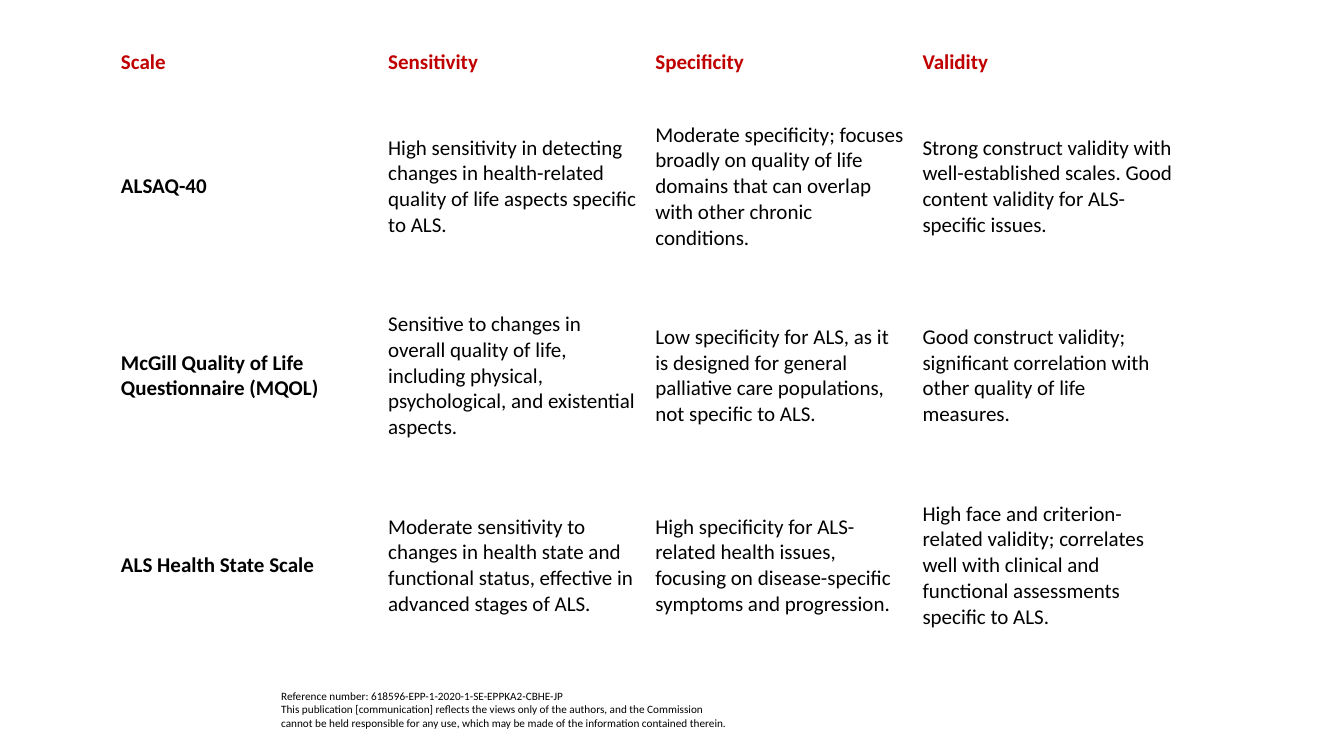
"""Build a slide comparing three ALS quality of life scales."""
from dataclasses import astuple, dataclass

from pptx import Presentation
from pptx.dml.color import RGBColor
from pptx.enum.text import MSO_ANCHOR, MSO_AUTO_SIZE
from pptx.slide import Slide
from pptx.text.text import _Paragraph
from pptx.util import Inches, Pt

MIDDLE = MSO_ANCHOR.MIDDLE
GROW = MSO_AUTO_SIZE.SHAPE_TO_FIT_TEXT
COLORS = {"heading": "C00000", "text": "000000"}
COLUMN_WIDTH = 2.65
ROW_HEIGHTS = (0.43, 2.04, 1.72, 2.04)
CELL_FORMAT = {
    "vertical_anchor": MIDDLE,
    "margin_left": Inches(0.08),
    "margin_right": Inches(0.08),
    "margin_top": Inches(0.04),
    "margin_bottom": Inches(0.04),
}
REFERENCE = (
    "Reference number: 618596-EPP-1-2020-1-SE-EPPKA2-CBHE-JP",
    "This publication [communication] reflects the views only of the authors, and the Commission "
    "cannot be held responsible for any use, which may be made of the information contained therein.",
)


@dataclass(frozen=True)
class ScaleRow:
    """One row of the comparison."""

    scale: str
    sensitivity: str
    specificity: str
    validity: str


ROWS = (
    ScaleRow("Scale", "Sensitivity", "Specificity", "Validity"),
    ScaleRow(
        "ALSAQ-40",
        "High sensitivity in detecting changes in health-related quality of life aspects specific to ALS.",
        "Moderate specificity; focuses broadly on quality of life domains that can overlap "
        "with other chronic conditions.",
        "Strong construct validity with well-established scales. Good content validity for ALS-specific issues.",
    ),
    ScaleRow(
        "McGill Quality of Life Questionnaire (MQOL)",
        "Sensitive to changes in overall quality of life, including physical, psychological, "
        "and existential aspects.",
        "Low specificity for ALS, as it is designed for general palliative care populations, "
        "not specific to ALS.",
        "Good construct validity; significant correlation with other quality of life measures.",
    ),
    ScaleRow(
        "ALS Health State Scale",
        "Moderate sensitivity to changes in health state and functional status, effective in "
        "advanced stages of ALS.",
        "High specificity for ALS-related health issues, focusing on disease-specific symptoms and progression.",
        "High face and criterion-related validity; correlates well with clinical and functional "
        "assessments specific to ALS.",
    ),
)


def write(paragraph: _Paragraph, text: str, size: float, color: str = "text", bold: bool = False) -> None:
    """Add one formatted run to a paragraph."""
    run = paragraph.add_run()
    run.text = text
    for name, value in {"name": "Calibri", "size": Pt(size), "bold": bold}.items():
        setattr(run.font, name, value)
    run.font.color.rgb = RGBColor.from_string(COLORS[color])


def add_reference(slide: Slide) -> None:
    """Add the funding reference below the table."""
    shape = slide.shapes.add_textbox(Inches(2.69), Inches(6.79), Inches(4.64), Inches(0.5))
    frame = shape.text_frame
    frame.word_wrap = True
    frame.auto_size = GROW
    for index, text in enumerate(REFERENCE):
        paragraph = frame.add_paragraph() if index else frame.paragraphs[0]
        write(paragraph, text, 8)


def add_scale_table(slide: Slide) -> None:
    """Add the comparison table with a heading row and a bold first column."""
    column_count = len(astuple(ROWS[0]))
    table = slide.shapes.add_table(
        len(ROWS), column_count, Inches(1.12), Inches(0.4),
        Inches(COLUMN_WIDTH * column_count), Inches(sum(ROW_HEIGHTS)),
    ).table
    table.first_row = False
    table.horz_banding = False
    for column in table.columns:
        column.width = Inches(COLUMN_WIDTH)
    for row_index, (row, height) in enumerate(zip(ROWS, ROW_HEIGHTS)):
        table.rows[row_index].height = Inches(height)
        is_heading = row_index == 0
        for column_index, text in enumerate(astuple(row)):
            cell = table.cell(row_index, column_index)
            cell.fill.background()
            for name, value in CELL_FORMAT.items():
                setattr(cell, name, value)
            write(
                cell.text_frame.paragraphs[0], text, 15,
                "heading" if is_heading else "text",
                is_heading or column_index == 0,
            )


def main() -> None:
    """Create and save the presentation."""
    presentation = Presentation()
    presentation.slide_width = Inches(13.33)
    presentation.slide_height = Inches(7.5)
    slide = presentation.slides.add_slide(presentation.slide_layouts[6])
    add_reference(slide)
    add_scale_table(slide)
    presentation.save("out.pptx")


if __name__ == "__main__":
    main()
